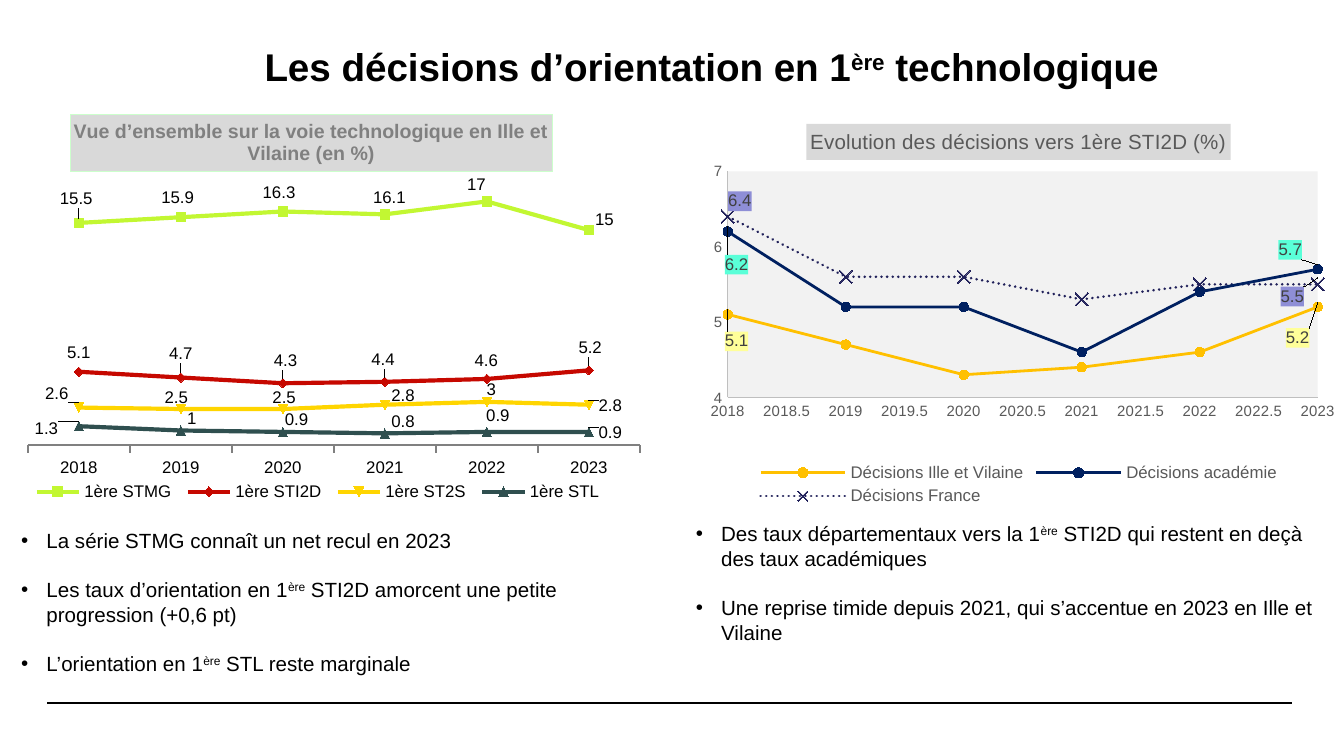
from dataclasses import dataclass
from typing import NamedTuple

from lxml import etree
from pptx import Presentation
from pptx.chart.data import CategoryChartData, XyChartData
from pptx.chart.datalabel import DataLabels
from pptx.dml.color import RGBColor
from pptx.enum.chart import (XL_CHART_TYPE, XL_LABEL_POSITION, XL_LEGEND_POSITION,
                             XL_MARKER_STYLE, XL_TICK_MARK)
from pptx.enum.dml import MSO_LINE
from pptx.enum.shapes import MSO_CONNECTOR
from pptx.enum.text import MSO_ANCHOR
from pptx.oxml import parse_xml
from pptx.oxml.ns import nsdecls, qn
from pptx.util import Inches, Pt

ABOVE = XL_LABEL_POSITION.ABOVE
BOTTOM = XL_LEGEND_POSITION.BOTTOM
NO_TICK, TICK_OUT = XL_TICK_MARK.NONE, XL_TICK_MARK.OUTSIDE
CIRCLE, CROSS = XL_MARKER_STYLE.CIRCLE, XL_MARKER_STYLE.X
DOTTED = MSO_LINE.ROUND_DOT
NO_LEADERS = (f'<c:extLst {nsdecls("c")}><c:ext uri="{{CE6537A1-D6FC-4f65-9D91-7224C49458BB}}" '
              'xmlns:c15="http://schemas.microsoft.com/office/drawing/2012/chart">'
              '<c15:showLeaderLines val="0"/></c:ext></c:extLst>')


@dataclass(frozen=True)
class Theme:
    font: str = "Arial"
    ink: str = "000000"
    grey: str = "595959"
    label: str = "404040"
    axis: str = "BFBFBF"
    panel: str = "F2F2F2"
    title_fill: str = "D9D9D9"
    title_edge: str = "CCFFCC"
    title_grey: str = "808080"
    heading: float = 20.7
    body: float = 11
    small: float = 9
    tick: float = 8


class Area(NamedTuple):
    """Percentages of the slide's width and height."""
    left: float
    top: float
    width: float
    height: float


class Curve(NamedTuple):
    name: str
    values: list
    color: str
    nudges: dict  # point index -> label shift, in percent of the chart
    marker: object = None
    label_fill: str = ""
    dash: object = None


THEME = Theme()
YEARS = range(2018, 2024)
TRACKS = [
    Curve("1ère STMG", [15.5, 15.9, 16.3, 16.1, 17, 15], "C2F732",
          dict(enumerate([(-0.4, -1), (-0.5, 0), (-0.6, 0.2), (0.7, 0.8), (-1.6, 0.8), (2.4, 2.3)]))),
    Curve("1ère STI2D", [5.1, 4.7, 4.3, 4.4, 4.6, 5.2], "C60800",
          dict(enumerate([(0, 0.2), (0, -1), (0.4, -0.7), (-0.3, -0.6), (-0.1, 0.3), (0.2, -0.7)]))),
    Curve("1ère ST2S", [2.6, 2.5, 2.5, 2.8, 3, 2.8], "FFD500",
          dict(enumerate([(-3.4, 1.4), (-0.7, 2.2), (0.2, 2), (2.8, 2.6), (0.7, 1.8), (3.3, 5.1)]))),
    Curve("1ère STL", [1.3, 1, 0.9, 0.8, 0.9, 0.9], "2F4F4F",
          dict(enumerate([(-5, 5.4), (1.7, 2), (2.1, 1.8), (2.8, 2.1), (1.7, 0.8), (3.3, 5.1)]))),
]
TERRITORIES = [
    Curve("Décisions Ille et Vilaine", [5.1, 4.7, 4.3, 4.4, 4.6, 5.2], "FFC000",
          {0: (1.3, 11.6), 5: (-3, 12.6)}, CIRCLE, "FFFF99"),
    Curve("Décisions académie", [6.2, 5.2, 5.2, 4.6, 5.4, 5.7], "002060",
          {0: (1.3, 13.1), 5: (-4.1, 0.1)}, CIRCLE, "5AFFD8"),
    Curve("Décisions France", [6.4, 5.6, 5.6, 5.3, 5.5, 5.5], "21215A",
          {0: (1.8, 1.6), 5: (-3.8, 8.4)}, CROSS, "8E8ED6", DOTTED),
]

prs = Presentation()
prs.slide_width = Inches(10)
prs.slide_height = prs.slide_width * 9 // 16
slide = prs.slides.add_slide(prs.slide_layouts[6])


def across(share: float) -> int:
    return int(prs.slide_width * share / 100)


def down(share: float) -> int:
    return int(prs.slide_height * share / 100)


def box(area: Area) -> tuple:
    return across(area.left), down(area.top), across(area.width), down(area.height)


def style_font(font, size: float, color: str, bold: bool = False) -> None:
    font.name, font.size, font.bold = THEME.font, Pt(size), bold
    font.color.rgb = RGBColor.from_string(color)


def write(paragraph, text: str, *, size: float = THEME.body, color: str = THEME.ink,
          bold: bool = False) -> None:
    """Write text; the parts between carets are superscript."""
    for index, part in enumerate(text.split("^")):
        run = paragraph.add_run()
        run.text = part
        style_font(run.font, size, color, bold)
        if index % 2:
            run.font._element.set("baseline", "30000")


def add_text_frame(area: Area):
    frame = slide.shapes.add_textbox(*box(area)).text_frame
    frame.word_wrap = True
    return frame


def add_bullets(area: Area, items: list) -> None:
    frame = add_text_frame(area)
    for index, item in enumerate(items):
        paragraph = frame.paragraphs[0] if index == 0 else frame.add_paragraph()
        props = paragraph._p.get_or_add_pPr()
        props.set("marL", str(Pt(13.5)))
        props.set("indent", str(-Pt(13.5)))
        etree.SubElement(props, qn("a:buFont")).set("typeface", THEME.font)
        etree.SubElement(props, qn("a:buChar")).set("char", "•")
        if index:
            paragraph.space_before = Pt(13)
        write(paragraph, item)


def set_layout(parent, position: int, **values) -> None:
    """Place a chart part by hand; values follow the schema's order."""
    for old in parent.findall(qn("c:layout")):
        parent.remove(old)
    layout = etree.Element(qn("c:layout"))
    manual = etree.SubElement(layout, qn("c:manualLayout"))
    for tag, value in values.items():
        etree.SubElement(manual, qn(f"c:{tag}")).set("val", str(value))
    parent.insert(position, layout)


def shares(percents: tuple) -> dict:
    return {axis: percent / 100 for axis, percent in zip("xywh", percents)}


def solid_fill(color: str):
    return parse_xml(f'<c:spPr {nsdecls("c", "a")}><a:solidFill><a:srgbClr val="{color}"/>'
                     '</a:solidFill></c:spPr>')


def style_curve(series, curve: Curve, width: float, label_color: str) -> None:
    color = RGBColor.from_string(curve.color)
    series.smooth = False
    series.format.line.width = Pt(width)
    series.format.line.color.rgb = color
    if curve.dash:
        series.format.line.dash_style = curve.dash
        series._element.spPr.find(qn("a:ln")).set("cap", "rnd")
    marker = series.marker
    if curve.marker:
        marker.style = curve.marker
    marker.size = 7 if curve.marker == CROSS else 5
    marker.format.line.color.rgb = color
    if curve.marker == CROSS:
        marker.format.fill.background()
    else:
        marker.format.fill.solid()
        marker.format.fill.fore_color.rgb = color
    # Labels
    labels = DataLabels(series._element.get_or_add_dLbls())
    labels.show_value = len(curve.nudges) == len(curve.values)
    style_font(labels.font, THEME.small, label_color)
    for leader in labels._element.findall(qn("c:showLeaderLines")):
        labels._element.remove(leader)
    labels._element.append(parse_xml(NO_LEADERS))
    for index, nudge in curve.nudges.items():
        label = series.points[index].data_label
        label.position = ABOVE
        style_font(label.font, THEME.small, label_color)
        element = labels._element.findall(qn("c:dLbl"))[-1]
        set_layout(element, 1, **shares(nudge))
        if curve.label_fill:
            element.find(qn("c:txPr")).addprevious(solid_fill(curve.label_fill))


def add_line_chart(area: Area, kind, data, curves: list, title: str, *, title_at: tuple,
                   plot: tuple, legend: tuple, title_format: dict, text_color: str,
                   label_color: str, width: float):
    """Add a chart; places inside it are percentages of its size."""
    chart = slide.shapes.add_chart(kind, *box(area), data).chart
    style_font(chart.font, 10, THEME.ink)
    write(chart.chart_title.text_frame.paragraphs[0], title, **title_format)
    title_fill = chart.chart_title.format.fill
    title_fill.solid()
    title_fill.fore_color.rgb = RGBColor.from_string(THEME.title_fill)
    edge = dict(xMode="edge", yMode="edge")
    set_layout(chart.chart_title._element, 1, **edge, **shares(title_at))
    chart.has_legend = True
    chart.legend.position = BOTTOM
    chart.legend.include_in_layout = False
    style_font(chart.legend.font, THEME.small, text_color)
    set_layout(chart.legend._element, 1, **edge, **shares(legend))
    plot_area = chart._chartSpace.chart.plotArea
    set_layout(plot_area, 0, layoutTarget="inner", **edge, **shares(plot))
    for axis in (chart.category_axis, chart.value_axis):
        axis.has_major_gridlines = False
        axis.major_tick_mark = axis.minor_tick_mark = NO_TICK
    for series, curve in zip(chart.plots[0].series, curves):
        style_curve(series, curve, width, label_color)
    return chart


def style_axis(axis, low: float, high: float, step: float) -> None:
    axis.minimum_scale, axis.maximum_scale, axis.major_unit = low, high, step
    axis.tick_labels.number_format = "General"
    axis.tick_labels.number_format_is_linked = False
    style_font(axis.tick_labels.font, THEME.tick, THEME.grey)
    axis.format.line.width = Pt(0.75)
    axis.format.line.color.rgb = RGBColor.from_string(THEME.axis)


# Footer rules
for start in (3.5, 3.9):
    rule = slide.shapes.add_connector(MSO_CONNECTOR.STRAIGHT, across(start), down(92.98),
                                      across(start + 92.2), down(92.98))
    rule.line.width = Pt(0.8)
    rule.line.color.rgb = RGBColor.from_string(THEME.ink)
    etree.SubElement(rule._element.spPr, qn("a:effectLst"))

# Heading
heading = add_text_frame(Area(18.7, 3.91, 77, 10.49))
heading.vertical_anchor = MSO_ANCHOR.MIDDLE
heading.paragraphs[0].line_spacing = 0.9
write(heading.paragraphs[0], "Les décisions d’orientation en 1^ère^ technologique",
      size=THEME.heading, bold=True)

# Overview of the technological tracks
overview_data = CategoryChartData()
overview_data.categories = [str(year) for year in YEARS]
for track in TRACKS:
    overview_data.add_series(track.name, track.values)
overview = add_line_chart(
    Area(1.2, 14.93, 48.3, 54.04), XL_CHART_TYPE.LINE_MARKERS, overview_data, TRACKS,
    "Vue d’ensemble sur la voie technologique en Ille et Vilaine (en %)",
    title_at=(8.3, 0.4), plot=(1.8, 18.2, 94.3, 63.1), legend=(1.5, 89.3, 90, 7),
    title_format=dict(size=10.5, color=THEME.title_grey, bold=True),
    text_color=THEME.ink, label_color=THEME.ink, width=2.25)
overview.chart_title.format.line.color.rgb = RGBColor.from_string(THEME.title_edge)
overview.value_axis.minimum_scale, overview.value_axis.maximum_scale = 0, 18
overview.value_axis.visible = False
overview.category_axis.major_tick_mark = TICK_OUT
overview.category_axis.format.line.color.rgb = RGBColor.from_string(THEME.title_grey)
style_font(overview.category_axis.tick_labels.font, THEME.small, THEME.ink)

# Decisions towards STI2D
sti2d_data = XyChartData()
for territory in TERRITORIES:
    points = sti2d_data.add_series(territory.name)
    for year, rate in zip(YEARS, territory.values):
        points.add_data_point(year, rate)
sti2d = add_line_chart(
    Area(50.8, 14.4, 50, 53.33), XL_CHART_TYPE.XY_SCATTER_LINES, sti2d_data, TERRITORIES,
    "Evolution des décisions vers 1ère STI2D (%)",
    title_at=(18.4, 3.7), plot=(6.7, 15.5, 87.8, 56.1), legend=(10.5, 87, 79, 12.4),
    title_format=dict(size=THEME.body, color=THEME.grey),
    text_color=THEME.grey, label_color=THEME.label, width=1.5)
style_axis(sti2d.category_axis, YEARS[0], YEARS[-1], 0.5)
style_axis(sti2d.value_axis, 4, 7, 1)
sti2d._chartSpace.chart.plotArea.append(solid_fill(THEME.panel))

# Comments under the charts
add_bullets(Area(0.6, 68.98, 49.6, 21.51), [
    "La série STMG connaît un net recul en 2023",
    "Les taux d’orientation en 1^ère^ STI2D amorcent une petite progression (+0,6 pt)",
    "L’orientation en 1^ère^ STL reste marginale"])
add_bullets(Area(50.8, 68.09, 48.3, 18.31), [
    "Des taux départementaux vers la 1^ère^ STI2D qui restent en deçà des taux académiques",
    "Une reprise timide depuis 2021, qui s’accentue en 2023 en Ille et Vilaine"])

prs.save("out.pptx")
